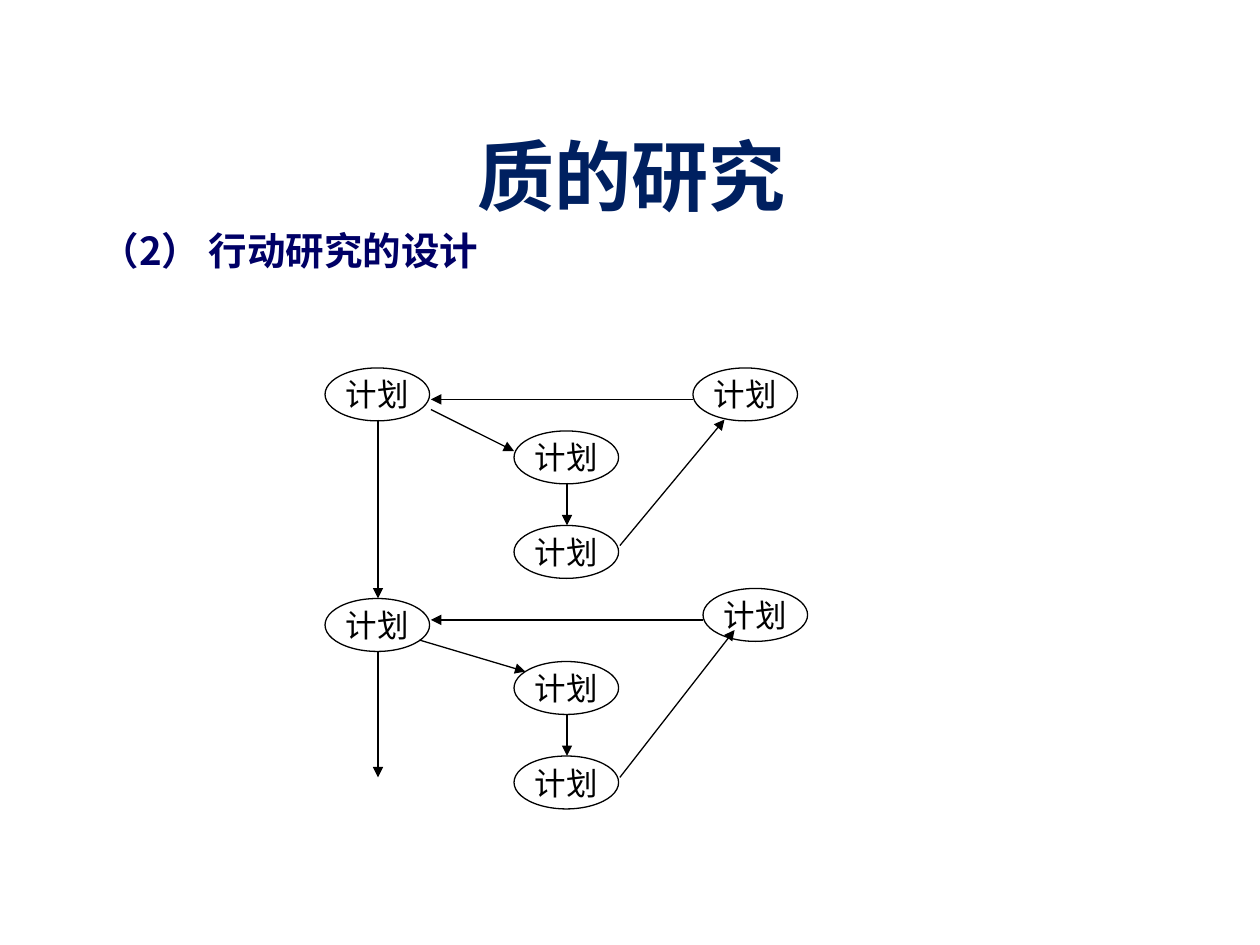
import pptx
import pptx.dml.color
import pptx.enum.shapes
import pptx.enum.text
import pptx.oxml
import pptx.oxml.ns
import pptx.util
from pptx.util import Inches

CJK_FONT = "Noto Sans CJK SC"
ANCHOR = pptx.enum.text.MSO_ANCHOR
ALIGN = pptx.enum.text.PP_ALIGN


def colour(value):
    return pptx.dml.color.RGBColor.from_string(value)


def write(box, text, size=18, font="Arial", ink="000000", bold=False,
          align=ALIGN.CENTER, anchor=ANCHOR.MIDDLE, wrap=True):
    frame = box.text_frame
    frame.word_wrap = wrap
    frame.vertical_anchor = anchor
    para = frame.paragraphs[0]
    para.alignment = align
    span = para.add_run()
    span.text = text
    span.font.size = pptx.util.Pt(size)
    span.font.bold = bold
    span.font.color.rgb = colour(ink)
    span.font.name = font
    east_asian = pptx.oxml.ns.qn("a:ea")
    span.font._element.makeelement(east_asian)
    latin = span.font._element.find(pptx.oxml.ns.qn("a:latin"))
    latin.addnext(latin.makeelement(east_asian, {"typeface": CJK_FONT}))


class CycleSlide:
    ink = "000000"
    paper = "FFFFFF"
    line_width = pptx.util.Pt(0.75)
    node_size = (Inches(0.83), Inches(0.42))

    def __init__(self, page):
        self.page = page

    def outline(self, line):
        line.color.rgb = colour(self.ink)
        line.width = self.line_width

    def heading(self, text, left, top, width, height, inset=0.1, **style):
        box = self.page.shapes.add_textbox(
            Inches(left), Inches(top), Inches(width), Inches(height))
        box.text_frame.margin_left = Inches(inset)
        write(box, text, font=CJK_FONT, bold=True, **style)

    def node(self, text, left, top):
        oval = self.page.shapes.add_shape(
            pptx.enum.shapes.MSO_SHAPE.OVAL, Inches(left), Inches(top), *self.node_size)
        oval.shadow.inherit = False
        oval.fill.solid()
        oval.fill.fore_color.rgb = colour(self.paper)
        self.outline(oval.line)
        write(oval, text, ink=self.ink, wrap=False)

    def arrow(self, start, end):
        connector = self.page.shapes.add_connector(
            pptx.enum.shapes.MSO_CONNECTOR.STRAIGHT, *map(Inches, start + end))
        self.outline(connector.line)
        properties = connector.element.spPr
        stroke = properties.find(pptx.oxml.ns.qn("a:ln"))
        head = stroke.makeelement(pptx.oxml.ns.qn("a:tailEnd"), {"type": "triangle"})
        stroke.append(head)
        properties.append(properties.makeelement(pptx.oxml.ns.qn("a:effectLst")))


NODES = [
    (2.58, 2.92), (4.08, 3.42), (5.5, 2.92), (4.08, 4.17),
    (2.58, 4.75), (4.08, 6), (5.58, 4.67), (4.08, 5.25),
]
ARROWS = [
    ((3, 3.33), (3, 4.75)),
    ((5.5, 3.17), (3.42, 3.17)),
    ((3.42, 3.25), (4.08, 3.58)),
    ((4.5, 3.83), (4.5, 4.17)),
    ((4.92, 4.33), (5.75, 3.33)),
    ((5.58, 4.92), (3.42, 4.92)),
    ((3.33, 5.08), (4.17, 5.33)),
    ((4.5, 5.67), (4.5, 6)),
    ((4.92, 6.17), (5.83, 5)),
    ((3, 5.17), (3, 6.17)),
]


def main():
    deck = pptx.Presentation()
    deck.slide_width, deck.slide_height = Inches(10), Inches(7.5)
    slide = CycleSlide(deck.slides.add_slide(deck.slide_layouts[6]))
    slide.heading("质的研究", 0.51, 0.76, 9, 1.25, size=44, ink="002060")
    slide.heading("（2） 行动研究的设计", 0.5, 1.75, 9, 4.95, inset=0.3, size=22,
                  ink="000066", align=ALIGN.LEFT, anchor=ANCHOR.TOP)
    for left, top in NODES:
        slide.node("计划", left, top)
    for start, end in ARROWS:
        slide.arrow(start, end)
    deck.save("out.pptx")


if __name__ == "__main__":
    main()
